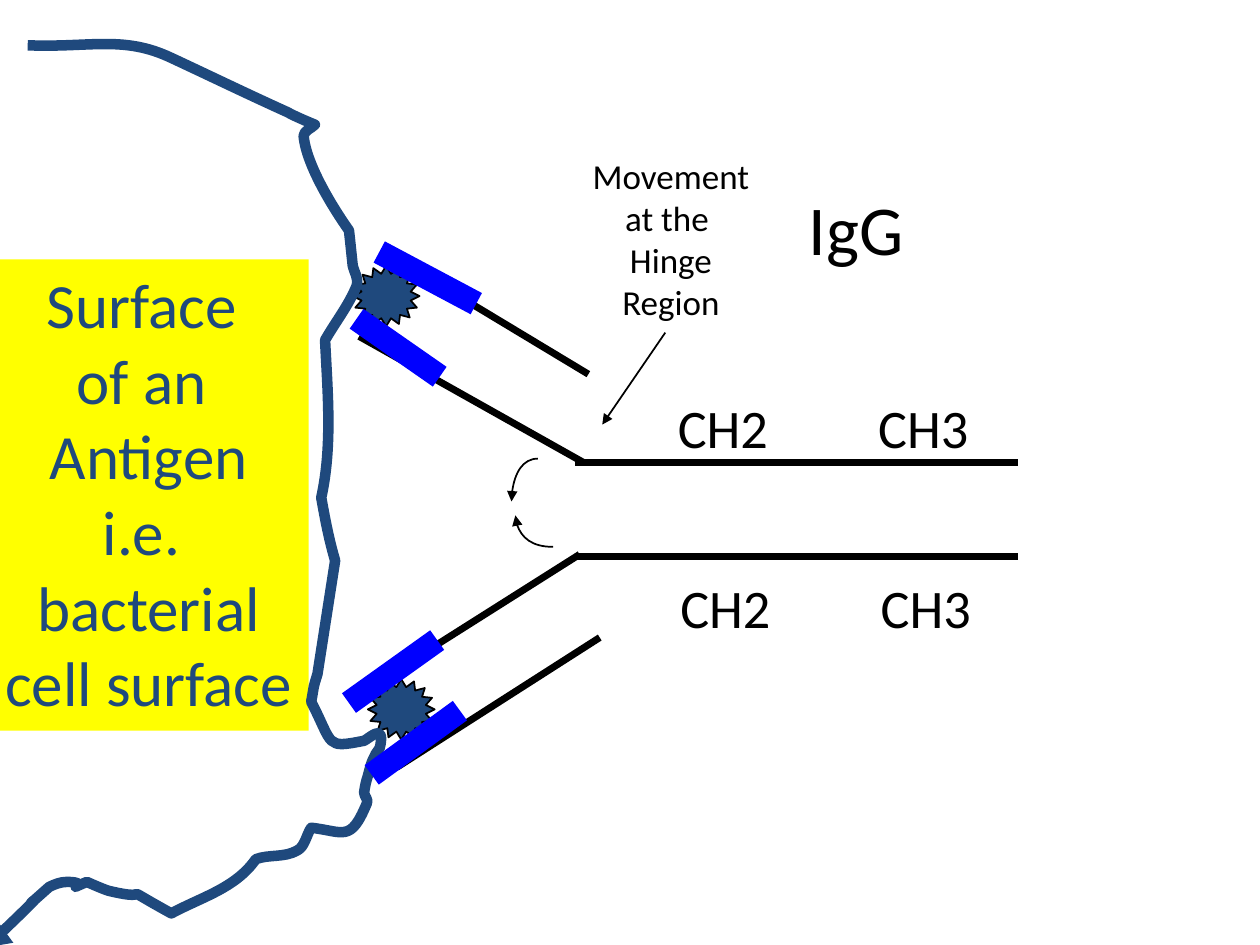
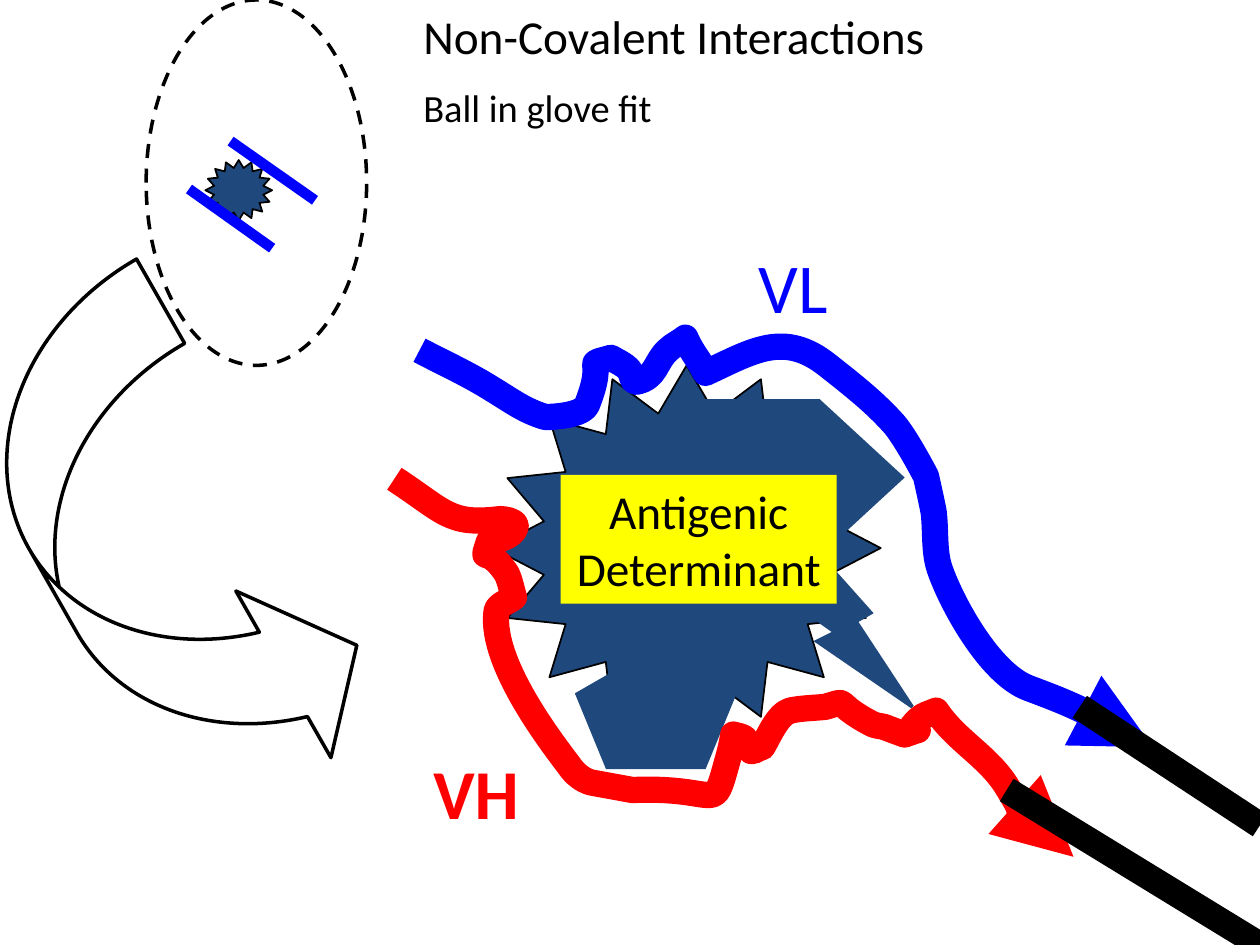
from lxml.etree import SubElement
from pptx import Presentation
from pptx.dml.color import RGBColor
from pptx.enum.dml import MSO_LINE
from pptx.enum.shapes import MSO_CONNECTOR, MSO_SHAPE as SHAPE
from pptx.enum.text import MSO_AUTO_SIZE, PP_ALIGN
from pptx.oxml.ns import qn
from pptx.util import Inches, Pt

FONT = "Calibri"
BLACK, NAVY, BLUE, RED, YELLOW = "000000", "1F497D", "0000FF", "FF0000", "FFFF00"
SIDE_MARGIN = 0.11
DOMAIN_TAB = 1.59

STAR = {"fill": NAVY, "line": BLACK, "width": 1}
ANTIGEN_PART = {"fill": NAVY, "line": NAVY, "width": 2, "mitred": True}
HEAVY_CHAIN = {"line": BLACK, "width": 4}
THIN_ARROW = {"line": BLACK, "width": 1, "arrow": True}
BINDING_SITE = {"line": BLUE, "width": 13.75}
SMALL_SITE = {"line": BLUE, "width": 6}
THICK_CHAIN = {"line": BLACK, "width": 15}
DOMAINS = {"lines": [("CH2\tCH3", 31)], "tab": DOMAIN_TAB}

# Curves: a start point, then two control points and an end point for each stretch
hinge_arc_top = [(4.27, 3.64), (4.15, 3.64), (4.06, 3.79), (4.06, 3.98)]
hinge_arc_bottom = [(4.39, 4.34), (4.22, 4.34), (4.09, 4.23), (4.09, 4.09)]
antigen_surface = [
    (0.22, 0.36),
    (0.72, 0.38), (0.98, 0.28), (1.36, 0.46),
    (1.66, 0.6), (1.97, 0.75), (2.28, 0.89),
    (2.35, 0.93), (2.5, 0.99), (2.5, 0.99),
    (2.47, 1.02), (2.41, 1.04), (2.41, 1.08),
    (2.43, 1.31), (2.65, 1.66), (2.77, 1.83),
    (2.78, 1.92), (2.79, 2.02), (2.8, 2.11),
    (2.81, 2.16), (2.85, 2.21), (2.83, 2.27),
    (2.77, 2.42), (2.66, 2.56), (2.58, 2.7),
    (2.6, 3.11), (2.64, 3.54), (2.55, 3.95),
    (2.58, 4.12), (2.61, 4.28), (2.66, 4.45),
    (2.66, 4.45), (2.52, 5.35), (2.52, 5.35),
    (2.48, 5.48), (2.5, 5.41), (2.47, 5.57),
    (2.65, 5.92), (2.58, 5.94), (2.89, 5.88),
    (2.93, 5.86), (3.05, 5.74), (3.02, 5.91),
    (3.02, 5.95), (2.98, 5.97), (2.97, 6.01),
    (2.94, 6.06), (2.93, 6.13), (2.91, 6.19),
    (2.9, 6.22), (2.89, 6.29), (2.89, 6.29),
    (2.89, 6.32), (2.93, 6.35), (2.91, 6.38),
    (2.78, 6.69), (2.73, 6.6), (2.47, 6.57),
    (2.43, 6.63), (2.42, 6.72), (2.36, 6.75),
    (2.26, 6.81), (2.13, 6.78), (2.03, 6.82),
    (1.87, 7.05), (1.6, 7.12), (1.36, 7.25),
    (0.87, 6.98), (1.28, 7.17), (0.86, 7.07),
    (0.8, 7.05), (0.69, 7), (0.69, 7),
    (0.47, 7.09), (0.75, 7), (0.53, 7),
    (0.48, 7), (0.43, 7.02), (0.39, 7.04),
    (0.01, 7.38), (0.61, 6.83), (-0.06, 7.47),
    (-0.13, 7.54), (-0.11, 7.53), (-0.17, 7.53),
]
light_chain = [
    (3.33, 2.78),
    (3.52, 2.88), (3.72, 2.97), (3.91, 3.09),
    (4.06, 3.18), (4.16, 3.26), (4.33, 3.31),
    (4.33, 3.31), (4.62, 3.31), (4.66, 3.21),
    (4.82, 2.81), (4.61, 2.91), (4.85, 2.84),
    (4.9, 2.87), (4.95, 2.89), (4.99, 2.93),
    (5.02, 2.96), (5.01, 3.03), (5.05, 3.03),
    (5.21, 3), (5.2, 2.87), (5.3, 2.78),
    (5.34, 2.74), (5.39, 2.72), (5.44, 2.68),
    (5.47, 2.75), (5.51, 2.81), (5.55, 2.87),
    (5.57, 2.9), (5.6, 2.96), (5.6, 2.96),
    (5.97, 2.79), (6.22, 2.62), (6.57, 2.9),
    (6.76, 3.05), (6.94, 3.19), (7.1, 3.37),
    (7.2, 3.49), (7.35, 3.78), (7.35, 3.78),
    (7.37, 3.87), (7.39, 3.96), (7.41, 4.06),
    (7.43, 4.21), (7.41, 4.38), (7.46, 4.52),
    (7.55, 4.78), (7.85, 5.34), (8.16, 5.46),
    (8.4, 5.55), (8.62, 5.64), (8.85, 5.77),
    (8.95, 5.83), (9.15, 5.93), (9.15, 5.93),
]
heavy_chain = [
    (3.13, 3.8),
    (3.53, 4.06), (3.56, 4.17), (3.97, 4.12),
    (3.98, 4.12), (4.18, 4.13), (4.05, 4.24),
    (4, 4.28), (3.88, 4.3), (3.88, 4.3),
    (3.82, 4.5), (3.85, 4.3), (4.02, 4.55),
    (4.05, 4.61), (4.06, 4.68), (4.08, 4.74),
    (4.03, 4.78), (3.94, 4.8), (3.94, 4.86),
    (3.89, 5.27), (4.4, 5.92), (4.52, 6.08),
    (4.56, 6.14), (4.62, 6.19), (4.69, 6.21),
    (4.8, 6.23), (5.02, 6.27), (5.02, 6.27),
    (5.73, 6.24), (5.65, 6.48), (5.77, 6.05),
    (5.79, 5.98), (5.81, 5.9), (5.82, 5.83),
    (5.85, 5.84), (5.88, 5.84), (5.91, 5.86),
    (5.93, 5.89), (5.93, 5.94), (5.96, 5.96),
    (5.99, 5.97), (6.02, 5.93), (6.05, 5.93),
    (6.1, 5.85), (6.17, 5.67), (6.27, 5.64),
    (6.36, 5.62), (6.45, 5.62), (6.55, 5.61),
    (6.76, 5.55), (6.59, 5.57), (6.91, 5.74),
    (6.94, 5.76), (6.98, 5.76), (7.02, 5.77),
    (7.07, 5.79), (7.18, 5.83), (7.18, 5.83),
    (7.45, 5.73), (7.1, 5.89), (7.29, 5.71),
    (7.33, 5.67), (7.39, 5.66), (7.43, 5.64),
    (7.59, 5.88), (7.84, 6), (7.99, 6.24),
    (8.13, 6.47), (8.21, 6.8), (8.52, 6.8),
]

# Each slide is a list of (kind, place, look), from back to front
hinge_slide = [
    ("line", (2.85, 2.67, 4.63, 3.67), HEAVY_CHAIN),
    ("line", (4.56, 3.67, 8.08, 3.67), HEAVY_CHAIN),
    ("line", (3.06, 2, 4.67, 2.97), HEAVY_CHAIN),
    ("line", (2.83, 5.52, 4.6, 4.4), HEAVY_CHAIN),
    ("line", (4.56, 4.42, 8.08, 4.42), HEAVY_CHAIN),
    ("line", (3.15, 6.09, 4.76, 5.06), HEAVY_CHAIN),
    ("text", (4.57, 1.18, 1.51, 1.46), {
        "lines": [("Movement ", 20), ("at the ", 20), ("Hinge", 20), ("Region", 20)],
        "centred": True, "wrap": False}),
    ("line", (5.28, 2.64, 4.78, 3.37), THIN_ARROW),
    ("text", (5.27, 3.08, 2.84, 0.63), DOMAINS),
    ("text", (5.29, 4.51, 2.84, 0.63), DOMAINS),
    ("text", (6.31, 1.42, 1.1, 0.78), {"lines": [("IgG", 40)]}),
    ("text", (-0.09, 2.06, 2.54, 3.74), {
        "lines": [(line, 36) for line in
                  ("Surface ", "of an ", "Antigen", "i.e. ", "bacterial", "cell surface")],
        "colour": NAVY, "fill": YELLOW, "centred": True, "wrap": False}),
    ("curve", (4.06, 3.64, 0.2, 0.34), {**THIN_ARROW, "points": hinge_arc_top}),
    ("curve", (4.09, 4.09, 0.31, 0.25), {**THIN_ARROW, "points": hinge_arc_bottom}),
    (SHAPE.STAR_16_POINT, (2.8, 2.11, 0.53, 0.48), STAR),
    (SHAPE.STAR_16_POINT, (2.92, 5.39, 0.53, 0.48), STAR),
    ("curve", (-0.17, 0.28, 3.22, 7.26), {
        "points": antigen_surface, "line": NAVY, "width": 6, "arrow": True}),
    ("line", (3.01, 2, 3.78, 2.41), BINDING_SITE),
    ("line", (2.83, 2.53, 3.49, 2.99), BINDING_SITE),
    ("line", (3.47, 5.08, 2.77, 5.58), BINDING_SITE),
    ("line", (3.65, 5.64, 2.95, 6.15), BINDING_SITE),
]
fit_slide = [
    (SHAPE.STAR_16_POINT, (1.63, 1.27, 0.53, 0.48), STAR),
    ("line", (1.83, 1.12, 2.5, 1.59), SMALL_SITE),
    ("line", (1.5, 1.5, 2.16, 1.97), SMALL_SITE),
    (SHAPE.STAR_16_POINT, (3.91, 2.9, 3.08, 2.9), STAR),
    (SHAPE.LIGHTNING_BOLT, (5.83, 3.93, 1.41, 1.68), ANTIGEN_PART),
    (SHAPE.REGULAR_PENTAGON, (4.58, 5.15, 1.25, 0.94), ANTIGEN_PART),
    ("curve", (3.33, 2.62, 5.83, 3.31), {
        "points": light_chain, "line": BLUE, "width": 15, "arrow": True}),
    (SHAPE.HEXAGON, (4.83, 3.18, 2.33, 1.22), {**ANTIGEN_PART, "adjust": [0.54, 1.15]}),
    ("curve", (3.13, 3.8, 5.38, 2.99), {
        "points": heavy_chain, "line": RED, "width": 15, "arrow": True}),
    ("text", (3.25, 0, 6.75, 1.12), {
        "lines": [("Non-Covalent Interactions", 27), ("Ball in glove fit", 22)]}),
    ("text", (4.45, 3.77, 2.19, 1.02), {
        "lines": [("Antigenic Determinant", 27)], "fill": YELLOW, "centred": True}),
    ("line", (8.57, 5.61, 10, 6.55), THICK_CHAIN),
    ("line", (7.99, 6.27, 10, 7.5), THICK_CHAIN),
    ("text", (5.91, 1.87, 1.58, 0.79), {"lines": [("VL", 40)], "colour": BLUE}),
    ("text", (3.33, 5.89, 1.5, 0.79), {"lines": [("VH", 40)], "colour": RED, "bold": True}),
    (SHAPE.OVAL, (1.16, 0, 1.75, 2.9), {"line": BLACK, "width": 2, "dashed": True}),
    (SHAPE.CURVED_RIGHT_ARROW, (0.39, 2.24, 1.88, 4.29), {
        "line": BLACK, "width": 2, "adjust": [0.41, 0.81, 0.33], "turn": 330.3}),
]


def add_curve(page, left, top, width, height, points):
    """Add an open freeform whose stretches are cubic Bézier curves."""
    builder = page.shapes.build_freeform(left, top)
    builder.add_line_segments([(left + width, top + height)], close=False)
    shape = builder.convert_to_shape()
    outline = shape._element.find(".//" + qn("a:path"))
    for straight in list(outline):
        outline.remove(straight)
    for index, (x, y) in enumerate(points):
        if index == 0:
            stretch = SubElement(outline, qn("a:moveTo"))
        elif index % 3 == 1:
            stretch = SubElement(outline, qn("a:cubicBezTo"))
        SubElement(stretch, qn("a:pt"), x=str(Inches(x) - left), y=str(Inches(y) - top))
    return shape


def colour(hex_code):
    return RGBColor.from_string(hex_code)


deck = Presentation()
deck.slide_width, deck.slide_height = Inches(10), Inches(7.5)

for drawing, end_margin in ((hinge_slide, 0.05), (fit_slide, 0.06)):
    page = deck.slides.add_slide(deck.slide_layouts[6])
    for kind, place, look in drawing:
        lengths = [Inches(value) for value in place]
        if kind == "curve":
            item = add_curve(page, *lengths, look["points"])
        elif kind == "line":
            item = page.shapes.add_connector(MSO_CONNECTOR.STRAIGHT, *lengths)
        elif kind == "text":
            item = page.shapes.add_textbox(*lengths)
        else:
            item = page.shapes.add_shape(kind, *lengths)

        if kind != "line":
            item.shadow.inherit = False
            item.rotation = look.get("turn", 0)
            if "fill" in look:
                item.fill.solid()
                item.fill.fore_color.rgb = colour(look["fill"])
            else:
                item.fill.background()
            for index, value in enumerate(look.get("adjust", [])):
                item.adjustments[index] = value

        if "line" in look:
            item.line.color.rgb = colour(look["line"])
            item.line.width = Pt(look["width"])
            if look.get("dashed"):
                item.line.dash_style = MSO_LINE.DASH
            properties = item._element.spPr
            if look.get("mitred"):
                SubElement(properties.find(qn("a:ln")), qn("a:miter"), lim="800000")
            if look.get("arrow"):
                SubElement(properties.find(qn("a:ln")), qn("a:tailEnd"), type="triangle")
            if kind == "line":
                SubElement(properties, qn("a:effectLst"))

        if kind == "text":
            frame = item.text_frame
            frame.word_wrap = look.get("wrap", True)
            frame.auto_size = MSO_AUTO_SIZE.SHAPE_TO_FIT_TEXT
            frame.margin_left = frame.margin_right = Inches(SIDE_MARGIN)
            frame.margin_top = frame.margin_bottom = Inches(end_margin)
            for index, (words, size) in enumerate(look["lines"]):
                para = frame.add_paragraph() if index else frame.paragraphs[0]
                para.alignment = PP_ALIGN.CENTER if look.get("centred") else PP_ALIGN.LEFT
                if index and drawing is fit_slide:
                    para.space_before = Pt(size / 2)
                if "tab" in look:
                    tabs = SubElement(para._p.get_or_add_pPr(), qn("a:tabLst"))
                    SubElement(tabs, qn("a:tab"), pos=str(Inches(look["tab"])), algn="l")
                span = para.add_run()
                span.text = words
                span.font.color.rgb = colour(look.get("colour", BLACK))
                for name, value in {"name": FONT, "size": Pt(size),
                                    "bold": look.get("bold", False)}.items():
                    setattr(span.font, name, value)

deck.save("out.pptx")
